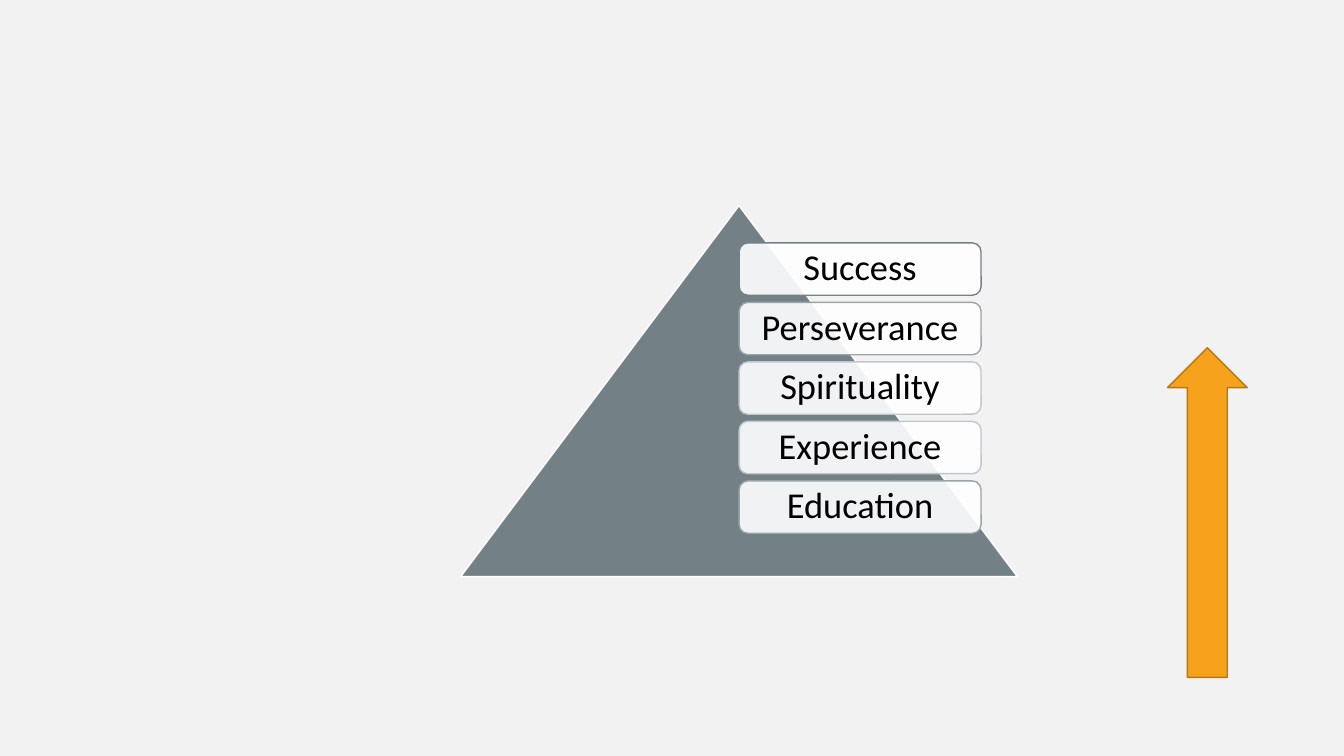
from lxml.etree import SubElement
from pptx import Presentation
from pptx.dml.color import RGBColor
from pptx.enum.shapes import MSO_SHAPE
from pptx.enum.text import MSO_ANCHOR, PP_ALIGN
from pptx.oxml.ns import qn
from pptx.util import Inches, Pt

WIDE, HIGH = Inches(13.33), Inches(7.5)
PALE = RGBColor(0xF2, 0xF2, 0xF2)
WHITE = RGBColor(0xFF, 0xFF, 0xFF)
BLACK = RGBColor(0x00, 0x00, 0x00)
SLATE = RGBColor(0x73, 0x81, 0x86)
STEEL = RGBColor(0x98, 0xA5, 0xAA)
MIST = RGBColor(0xBE, 0xC8, 0xCC)
GOLD = RGBColor(0xF6, 0xA2, 0x1D)
BROWN = RGBColor(0xB6, 0x78, 0x15)

STEPS = [
    ("Success", SLATE),
    ("Perseverance", STEEL),
    ("Spirituality", MIST),
    ("Experience", MIST),
    ("Education", STEEL),
]
TOP, PITCH = 32.13, 7.87
FRAME = {
    "word_wrap": True,
    "vertical_anchor": MSO_ANCHOR.MIDDLE,
    "margin_left": Inches(0.13),
    "margin_right": Inches(0.13),
    "margin_top": Inches(0.13),
    "margin_bottom": Inches(0.13),
}
PARA = {"alignment": PP_ALIGN.CENTER, "line_spacing": 0.9}
FONT = {"name": "Calibri", "size": Pt(26)}


def style(item, values):
    """Set each attribute of item from a dict of format values."""
    for name, value in values.items():
        setattr(item, name, value)


def add_form(slide, kind, box, fill, line):
    """Add a filled preset shape; box is given in percent of the slide."""
    left, top, width, height = box
    form = slide.shapes.add_shape(
        kind,
        round(WIDE * left / 100),
        round(HIGH * top / 100),
        round(WIDE * width / 100),
        round(HIGH * height / 100),
    )
    form.shadow.inherit = False
    form.fill.solid()
    form.fill.fore_color.rgb = fill
    form.line.color.rgb = line
    form.line.width = Pt(1)
    return form


def fade(form, share):
    """Make the solid fill of a shape opaque by the given percent."""
    color = form.fill._xPr.find(qn("a:solidFill"))[0]
    SubElement(color, qn("a:alpha")).set("val", str(share * 1000))


def add_step(slide, row, text, line):
    """Add one labelled step of the pyramid in the given row."""
    box = (55, TOP + row * PITCH, 18, 6.93)
    form = add_form(slide, MSO_SHAPE.ROUNDED_RECTANGLE, box, WHITE, line)
    fade(form, 90)
    frame = form.text_frame
    style(frame, FRAME)
    para = frame.paragraphs[0]
    style(para, PARA)
    run = para.add_run()
    run.text = text
    style(run.font, FONT)
    run.font.color.rgb = BLACK


def main():
    """Build the slide and save it."""
    deck = Presentation()
    style(deck, {"slide_width": WIDE, "slide_height": HIGH})
    slide = deck.slides.add_slide(deck.slide_layouts[6])
    slide.background.fill.solid()
    slide.background.fill.fore_color.rgb = PALE
    add_form(slide, MSO_SHAPE.ISOSCELES_TRIANGLE,
             (34.28, 27.2, 41.41, 49.07), SLATE, WHITE)
    for row, (text, line) in enumerate(STEPS):
        add_step(slide, row, text, line)
    add_form(slide, MSO_SHAPE.UP_ARROW,
             (86.87, 46, 5.93, 43.6), GOLD, BROWN)
    deck.save("out.pptx")


if __name__ == "__main__":
    main()
